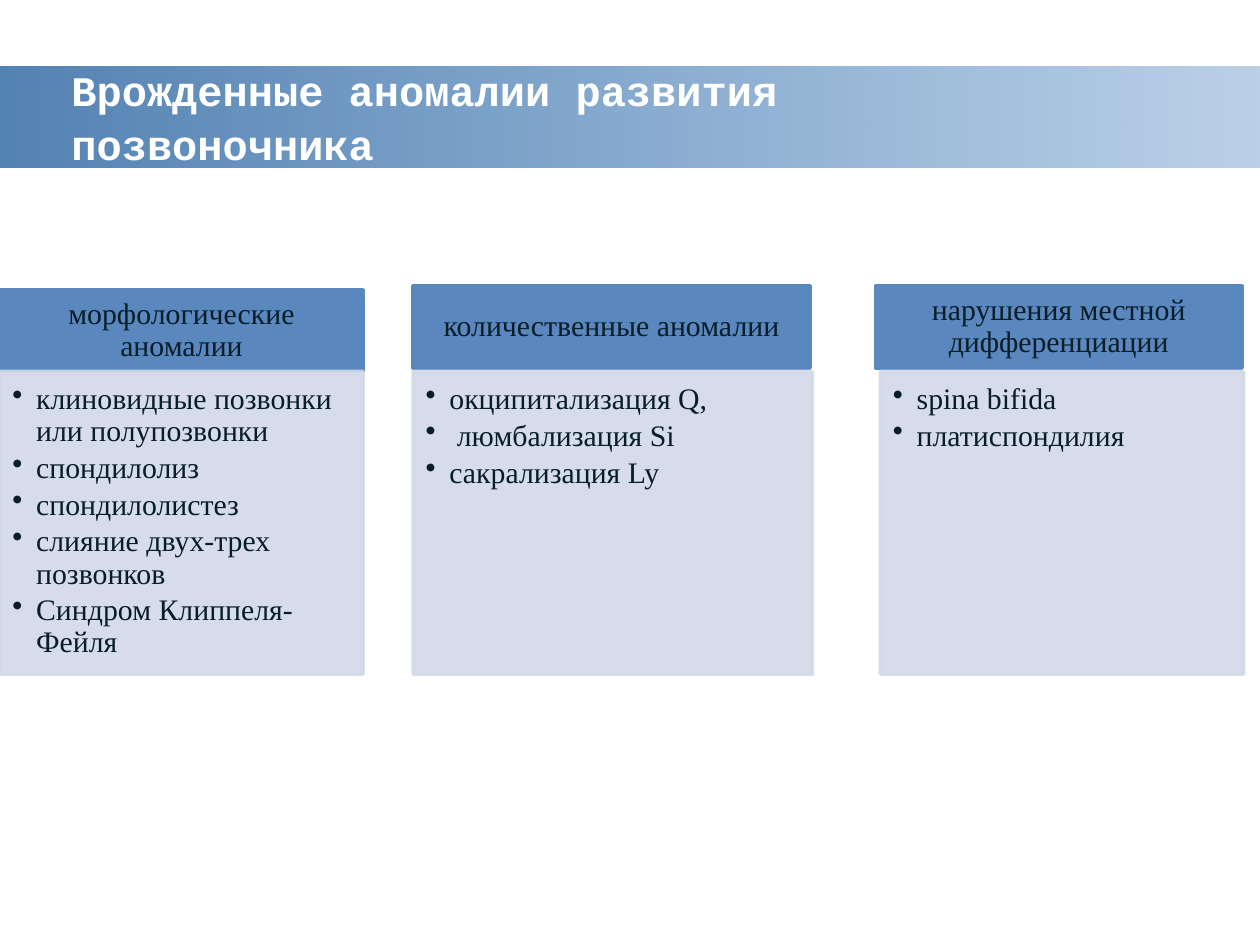
from dataclasses import dataclass

from lxml import etree
from pptx import Presentation
from pptx.dml.color import RGBColor
from pptx.enum.shapes import MSO_SHAPE
from pptx.enum.text import MSO_ANCHOR, PP_ALIGN
from pptx.oxml.ns import qn
from pptx.util import Cm, Pt

RECTANGLE = MSO_SHAPE.RECTANGLE
TOP, MIDDLE = MSO_ANCHOR.TOP, MSO_ANCHOR.MIDDLE
LEFT, CENTER = PP_ALIGN.LEFT, PP_ALIGN.CENTER


@dataclass(frozen=True)
class Theme:
    band_start: str = "00478F"
    band_end: str = "0052A4"
    band_alphas: tuple[int, int] = (68, 27)
    header: str = "5A87BE"
    body: str = "D2D9E8"
    body_alpha: int = 90
    title_text: str = "FFFFFF"
    text: str = "071D28"
    title_font: str = "Courier New"
    text_font: str = "Times New Roman"
    title_size: int = 24
    text_size: int = 17


@dataclass(frozen=True)
class Box:
    left: float
    top: float
    width: float
    height: float

    def lengths(self) -> tuple[Cm, Cm, Cm, Cm]:
        return Cm(self.left), Cm(self.top), Cm(self.width), Cm(self.height)


@dataclass(frozen=True)
class Category:
    heading: str
    items: tuple[str, ...]
    header_box: Box
    body_box: Box


THEME = Theme()
HEADER_HEIGHT, BODY_TOP, BODY_HEIGHT = 1.65, 7.49, 6.1
CATEGORIES = (
    Category(
        "морфологические аномалии",
        (
            "клиновидные позвонки или полупозвонки",
            "спондилолиз",
            "спондилолистез",
            "слияние двух-трех позвонков",
            "Синдром Клиппеля- Фейля",
        ),
        Box(0, 5.84, 7.32, HEADER_HEIGHT),
        Box(0, BODY_TOP, 7.32, BODY_HEIGHT),
    ),
    Category(
        "количественные аномалии",
        ("окципитализация Q,", " люмбализация Si", "сакрализация Ly"),
        Box(8.33, 5.77, 8, HEADER_HEIGHT),
        Box(8.33, BODY_TOP, 8.05, BODY_HEIGHT),
    ),
    Category(
        "нарушения местной дифференциации",
        ("spina bifida", "платиспондилия"),
        Box(17.65, 5.77, 7.39, HEADER_HEIGHT),
        Box(17.75, BODY_TOP, 7.32, BODY_HEIGHT),
    ),
)


def set_alphas(shape, *percents: int) -> None:
    """Apply opacity percentages to the shape's colours in order."""
    for color, percent in zip(shape.element.spPr.iter(qn("a:srgbClr")), percents):
        etree.SubElement(color, qn("a:alpha")).set("val", str(percent * 1000))


def add_bullet(paragraph) -> None:
    """Give a paragraph a hanging round bullet."""
    paragraph.level = 1
    properties = paragraph._p.get_or_add_pPr()
    properties.set("marL", str(Cm(0.48)))
    properties.set("indent", str(-Cm(0.48)))
    etree.SubElement(properties, qn("a:buChar")).set("char", "•")


def write_text(shape, *lines: str, font: str, size: float, color: str,
               insets: tuple[float, float, float, float], bold: bool = False,
               align=LEFT, anchor=MIDDLE, spacing: float = 1.0,
               after: float = 0, bullets: bool = False) -> None:
    """Write one paragraph per line with a shared format."""
    frame = shape.text_frame
    frame.word_wrap = True
    frame.vertical_anchor = anchor
    (frame.margin_left, frame.margin_top,
     frame.margin_right, frame.margin_bottom) = map(Cm, insets)
    for index, line in enumerate(lines):
        paragraph = frame.add_paragraph() if index else frame.paragraphs[0]
        paragraph.alignment = align
        paragraph.line_spacing = spacing
        paragraph.space_after = Pt(after)
        if bullets:
            add_bullet(paragraph)
        run = paragraph.add_run()
        run.text = line
        run.font.name = font
        run.font.size = Pt(size)
        run.font.bold = bold
        run.font.color.rgb = RGBColor.from_string(color)


def add_panel(slide, box: Box, color: str):
    """Add a filled and outlined rectangle."""
    shape = slide.shapes.add_shape(RECTANGLE, *box.lengths())
    shape.shadow.inherit = False
    shape.fill.solid()
    shape.fill.fore_color.rgb = RGBColor.from_string(color)
    shape.line.color.rgb = RGBColor.from_string(color)
    shape.line.width = Pt(2)
    return shape


def add_title(slide, title: str) -> None:
    """Add the gradient band and the title over it."""
    band = slide.shapes.add_shape(RECTANGLE, *Box(0, 1.35, 25.4, 2.03).lengths())
    band.shadow.inherit = False
    band.line.fill.background()
    band.fill.gradient()
    band.fill.gradient_angle = 0
    for stop, color in zip(band.fill.gradient_stops, (THEME.band_start, THEME.band_end)):
        stop.color.rgb = RGBColor.from_string(color)
    set_alphas(band, *THEME.band_alphas)
    text_box = slide.shapes.add_textbox(*Box(1.19, 1.4, 16.51, 1.6).lengths())
    write_text(text_box, title, font=THEME.title_font, size=THEME.title_size,
               color=THEME.title_text, bold=True, spacing=1.07,
               insets=(0.25, 0.38, 0.25, 0.13))


def add_category(slide, category: Category) -> None:
    """Add a heading panel and the bulleted panel below it."""
    header = add_panel(slide, category.header_box, THEME.header)
    write_text(header, category.heading, font=THEME.text_font, size=THEME.text_size,
               color=THEME.text, align=CENTER, spacing=0.9,
               insets=(0.33, 0.2, 0.33, 0.2))
    body = add_panel(slide, category.body_box, THEME.body)
    set_alphas(body, THEME.body_alpha, THEME.body_alpha)
    write_text(body, *category.items, font=THEME.text_font, size=THEME.text_size,
               color=THEME.text, anchor=TOP, spacing=0.9, after=2.6, bullets=True,
               insets=(0.25, 0.25, 0.33, 0.38))


def main() -> None:
    """Build and save the presentation."""
    presentation = Presentation()
    presentation.slide_width, presentation.slide_height = Cm(25.4), Cm(19.05)
    slide = presentation.slides.add_slide(presentation.slide_layouts[6])
    add_title(slide, "Врожденные аномалии развития позвоночника")
    for category in CATEGORIES:
        add_category(slide, category)
    presentation.save("out.pptx")


if __name__ == "__main__":
    main()
